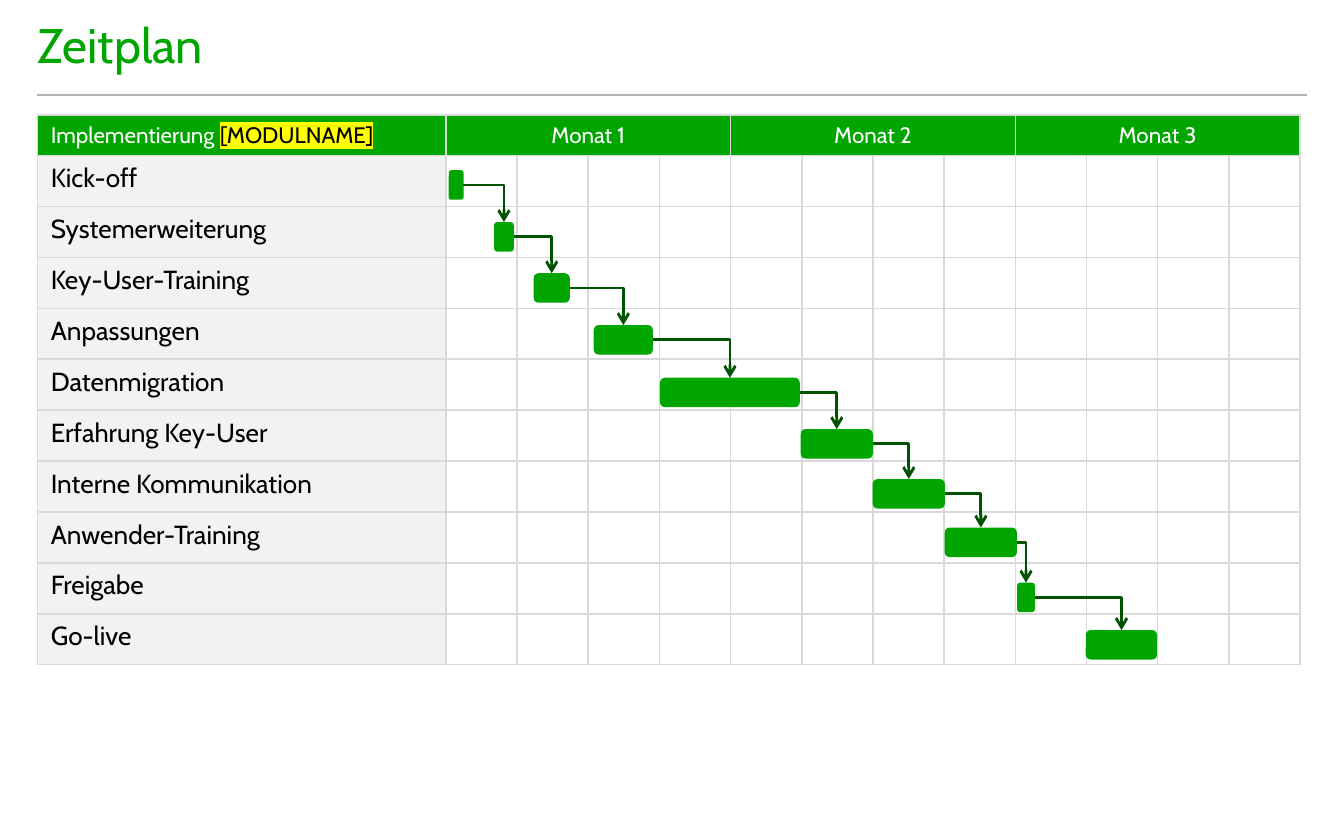
from lxml import etree
from pptx import Presentation
from pptx.dml.color import RGBColor
from pptx.enum.shapes import MSO_CONNECTOR, MSO_SHAPE
from pptx.enum.text import MSO_ANCHOR, PP_ALIGN
from pptx.oxml.ns import qn
from pptx.util import Pt

STRAIGHT, ELBOW = MSO_CONNECTOR.STRAIGHT, MSO_CONNECTOR.ELBOW
ROUNDED = MSO_SHAPE.ROUNDED_RECTANGLE
MIDDLE, TOP = MSO_ANCHOR.MIDDLE, MSO_ANCHOR.TOP
LEFT, CENTER = PP_ALIGN.LEFT, PP_ALIGN.CENTER
TOP_SIDE, RIGHT_SIDE = 0, 3

GREEN = RGBColor(0x00, 0xA5, 0x00)
DARK_GREEN = RGBColor(0x00, 0x52, 0x00)
WHITE = RGBColor(0xFF, 0xFF, 0xFF)
BLACK = RGBColor(0x00, 0x00, 0x00)
YELLOW = RGBColor(0xFF, 0xFF, 0x00)
LABEL_GREY = RGBColor(0xF2, 0xF2, 0xF2)
GRID_GREY = RGBColor(0xD9, 0xD9, 0xD9)
RULE_GREY = RGBColor(0xB2, 0xB2, 0xB2)

FONT = "Cabin"
MONTHS = ["Monat 1", "Monat 2", "Monat 3"]
WEEKS_PER_MONTH = 4
WEEKS = len(MONTHS) * WEEKS_PER_MONTH
LABEL_WIDTH = 218.9
HEADER_HEIGHT = 21.7
BAR_HEIGHT = 15.8

# name, start from the first week, length, drop from the row top
TASKS = [
    ("Kick-off", 1.5, 7.9, 7.8),
    ("Systemerweiterung", 25.8, 10.6, 8.3),
    ("Key-User-Training", 47, 19.4, 8.4),
    ("Anpassungen", 79.2, 31.7, 8.9),
    ("Datenmigration", 114.7, 74.9, 9.8),
    ("Erfahrung Key-User", 190, 38.7, 10),
    ("Interne Kommunikation", 228.6, 38.7, 9.5),
    ("Anwender-Training", 267.2, 38.7, 8.2),
    ("Freigabe", 306, 9.5, 10.4),
    ("Go-live", 342.8, 38.2, 8.5),
]


def style_text(paragraph, size, color, align=LEFT):
    paragraph.alignment = align
    paragraph.font.name = FONT
    paragraph.font.size = Pt(size)
    paragraph.font.color.rgb = color


def highlight(run, color):
    mark = etree.SubElement(run.font._element, qn("a:highlight"))
    etree.SubElement(mark, qn("a:srgbClr"), val=str(color))


def style_cell(cell, fill, inset_x=0, inset_y=0, anchor=TOP):
    properties = cell._tc.get_or_add_tcPr()
    for side in ("lnL", "lnR", "lnT", "lnB"):
        border = etree.SubElement(properties, qn(f"a:{side}"), w=str(Pt(1)))
        paint = etree.SubElement(border, qn("a:solidFill"))
        etree.SubElement(paint, qn("a:srgbClr"), val=str(GRID_GREY))
    if fill is None:
        cell.fill.background()
    else:
        cell.fill.solid()
        cell.fill.fore_color.rgb = fill
    cell.margin_left = cell.margin_right = Pt(inset_x)
    cell.margin_top = cell.margin_bottom = Pt(inset_y)
    cell.vertical_anchor = anchor


def style_connector(connector, color, width):
    connector.line.color.rgb = color
    connector.line.width = Pt(width)
    etree.SubElement(connector._element.spPr, qn("a:effectLst"))


def add_heading(slide, left, top, width, height):
    heading = slide.shapes.add_textbox(Pt(left), Pt(top), Pt(width), Pt(height))
    frame = heading.text_frame
    frame.word_wrap = True
    frame.vertical_anchor = MIDDLE
    frame.margin_left = frame.margin_right = 0
    frame.margin_top = frame.margin_bottom = 0
    title = frame.paragraphs[0]
    title.text = "Zeitplan"
    title.line_spacing = 0.9
    style_text(title, 26, GREEN)
    bottom = Pt(top + height)
    rule = slide.shapes.add_connector(
        STRAIGHT, Pt(left), bottom, Pt(left + width), bottom)
    style_connector(rule, RULE_GREY, 1)


def add_plan_grid(slide, left, top, width, height):
    plan = slide.shapes.add_table(
        len(TASKS) + 1, WEEKS + 1, Pt(left), Pt(top), Pt(width), Pt(height)).table
    plan.first_row = plan.horz_banding = False
    for index, column in enumerate(plan.columns):
        column.width = Pt((width - LABEL_WIDTH) / WEEKS if index else LABEL_WIDTH)
    for index, row in enumerate(plan.rows):
        row.height = Pt((height - HEADER_HEIGHT) / len(TASKS) if index else HEADER_HEIGHT)

    module = plan.cell(0, 0)
    style_cell(module, GREEN, 7.2, 3.6, MIDDLE)
    paragraph = module.text_frame.paragraphs[0]
    style_text(paragraph, 12, WHITE)
    paragraph.add_run().text = "Implementierung "
    module_name = paragraph.add_run()
    module_name.text = "[MODULNAME]"
    module_name.font.color.rgb = BLACK
    highlight(module_name, YELLOW)

    for week in range(1, WEEKS + 1):
        style_cell(plan.cell(0, week), GREEN, 0, 3.6, MIDDLE)
    for index, name in enumerate(MONTHS):
        first = 1 + index * WEEKS_PER_MONTH
        month = plan.cell(0, first)
        month.merge(plan.cell(0, first + WEEKS_PER_MONTH - 1))
        month.text = name
        style_text(month.text_frame.paragraphs[0], 12, WHITE, CENTER)

    for row, (name, *_) in enumerate(TASKS, 1):
        label = plan.cell(row, 0)
        label.text = name
        style_cell(label, LABEL_GREY, 7.2, 3.6)
        style_text(label.text_frame.paragraphs[0], 14, BLACK)
        for week in range(1, WEEKS + 1):
            style_cell(plan.cell(row, week), None)


def add_dependency(slide, earlier, later):
    arrow = slide.shapes.add_connector(ELBOW, 0, 0, 0, 0)
    arrow.begin_connect(earlier, RIGHT_SIDE)
    arrow.end_connect(later, TOP_SIDE)
    arrow._element.spPr.find(qn("a:prstGeom")).set("prst", "bentConnector2")
    style_connector(arrow, DARK_GREEN, 1.5)
    etree.SubElement(arrow.line._get_or_add_ln(), qn("a:tailEnd"), type="arrow")


def add_task_bars(slide, left, top, height):
    row_height = height / len(TASKS)
    bars = []
    for row, (_, start, length, drop) in enumerate(TASKS):
        bar = slide.shapes.add_shape(
            ROUNDED, Pt(left + start), Pt(top + row * row_height + drop),
            Pt(length), Pt(BAR_HEIGHT))
        bar.shadow.inherit = False
        bar.fill.solid()
        bar.fill.fore_color.rgb = GREEN
        bar.line.fill.background()
        bars.append(bar)
    for earlier, later in zip(bars, bars[1:]):
        add_dependency(slide, earlier, later)


def add_schedule(slide, left, top, width, height):
    add_plan_grid(slide, left, top, width, height)
    add_task_bars(slide, left + LABEL_WIDTH, top + HEADER_HEIGHT, height - HEADER_HEIGHT)


def main():
    presentation = Presentation()
    presentation.slide_width = Pt(720)
    presentation.slide_height = Pt(450)
    slide = presentation.slides.add_slide(presentation.slide_layouts[6])
    add_heading(slide, 20, 0, 680, 51)
    add_schedule(slide, 20, 61.7, 676.6, 294.6)
    presentation.save("out.pptx")


if __name__ == "__main__":
    main()
